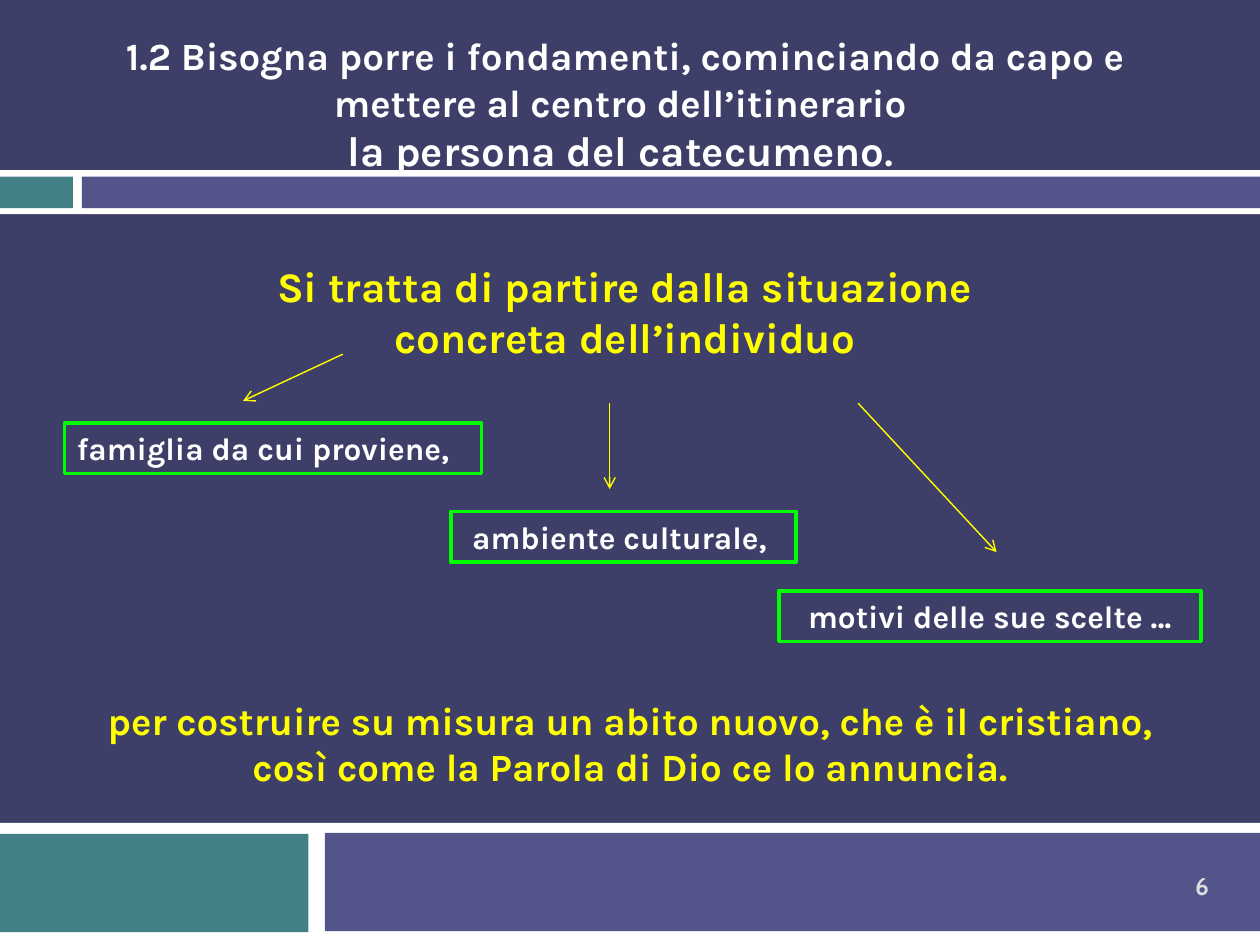
from lxml.etree import SubElement
from pptx import Presentation
from pptx.dml.color import RGBColor
from pptx.enum.shapes import MSO_CONNECTOR, MSO_SHAPE
from pptx.enum.text import MSO_ANCHOR, MSO_AUTO_SIZE, PP_ALIGN
from pptx.oxml.ns import qn
from pptx.util import Cm, Pt

COLORS = {
    "background": "3E3F68",
    "white": "FFFFFF",
    "teal": "438086",
    "violet": "53548A",
    "yellow": "FFFF00",
    "green": "00FF00",
    "number": "DEDEDE",
}
SLIDE_W, SLIDE_H = 25.4, 19.05
BOX_H = 1.02

BARS = [
    (0, 3.43, SLIDE_W, 0.89, "white"),
    (0, 3.56, 1.47, 0.64, "teal"),
    (1.65, 3.56, 23.75, 0.64, "violet"),
    (0, 16.59, SLIDE_W, 2.46, "white"),
    (0, 16.81, 6.22, 1.98, "teal"),
    (6.55, 16.79, 18.85, 1.98, "violet"),
]
BOXES = [
    (1.3, 8.53, 8.41, "famiglia da cui proviene,", PP_ALIGN.LEFT),
    (9.09, 10.31, 6.96, "ambiente culturale, ", PP_ALIGN.CENTER),
    (15.7, 11.91, 8.51, "motivi delle sue scelte …", PP_ALIGN.CENTER),
]
ARROWS = [
    (6.91, 7.14, 4.9, 8.08),
    (12.29, 8.13, 12.29, 9.86),
    (17.3, 8.13, 20.09, 11.13),
]


def rgb(name):
    return RGBColor.from_string(COLORS[name])


def add_rect(slide, x, y, w, h):
    sp = slide.shapes.add_shape(MSO_SHAPE.RECTANGLE, Cm(x), Cm(y), Cm(w), Cm(h))
    sp.shadow.inherit = False
    return sp


def add_bar(slide, x, y, w, h, color):
    sp = add_rect(slide, x, y, w, h)
    sp.fill.solid()
    sp.fill.fore_color.rgb = rgb(color)
    sp.line.fill.background()


def write(sp, paragraphs, color, font="Karla", align=PP_ALIGN.CENTER):
    """Fill a shape with paragraphs, each a list of (text, size) runs."""
    tf = sp.text_frame
    tf.word_wrap = True
    tf.auto_size = MSO_AUTO_SIZE.SHAPE_TO_FIT_TEXT
    tf.vertical_anchor = MSO_ANCHOR.TOP
    for i, runs in enumerate(paragraphs):
        p = tf.add_paragraph() if i else tf.paragraphs[0]
        p.alignment = align
        for text, size in runs:
            r = p.add_run()
            r.text = text
            r.font.name = font
            r.font.size = Pt(size)
            r.font.bold = True
            r.font.color.rgb = rgb(color)


def add_text(slide, x, y, w, h, paragraphs, color):
    sp = slide.shapes.add_textbox(Cm(x), Cm(y), Cm(w), Cm(h))
    write(sp, paragraphs, color)


def add_box(slide, x, y, w, text, align):
    sp = add_rect(slide, x, y, w, BOX_H)
    sp.fill.background()
    sp.line.color.rgb = rgb("green")
    sp.line.width = Pt(2)
    write(sp, [[(text, 18)]], "white", align=align)


def add_arrow(slide, x1, y1, x2, y2):
    line = slide.shapes.add_connector(
        MSO_CONNECTOR.STRAIGHT, Cm(x1), Cm(y1), Cm(x2), Cm(y2))
    line.line.color.rgb = rgb("yellow")
    line.line.width = Pt(0.79)
    SubElement(line.line._get_or_add_ln(), qn("a:tailEnd"), type="arrow")
    SubElement(line._element.spPr, qn("a:effectLst"))


def add_page_number(slide, number):
    sp = slide.shapes.add_textbox(Cm(23.06), Cm(17.32), Cm(2.34), Cm(1.07))
    write(sp, [[(number, 14)]], "number", font="Cabin")
    sp.text_frame.auto_size = MSO_AUTO_SIZE.NONE
    sp.text_frame.vertical_anchor = MSO_ANCHOR.MIDDLE


def main():
    prs = Presentation()
    prs.slide_width, prs.slide_height = Cm(SLIDE_W), Cm(SLIDE_H)
    slide = prs.slides.add_slide(prs.slide_layouts[6])
    slide.background.fill.solid()
    slide.background.fill.fore_color.rgb = rgb("background")

    for bar in BARS:
        add_bar(slide, *bar)
    add_page_number(slide, "6")

    add_text(slide, 0, 5.13, SLIDE_W, 2.31, [
        [("Si tratta di partire dalla situazione ", 24)],
        [("concreta dell’individuo ", 24)],
    ], "yellow")
    for box in BOXES:
        add_box(slide, *box)
    add_text(slide, 0, 13.92, SLIDE_W, 2.13, [
        [("per costruire su misura un abito nuovo, che è il cristiano,", 22)],
        [(" così come la Parola di Dio ce lo annuncia. ", 22)],
    ], "yellow")
    add_text(slide, 1.5, 0.53, 22.2, 3.18, [
        [("1.2 Bisogna porre i fondamenti, cominciando da capo e "
          "mettere al centro dell’itinerario ", 22)],
        [("la persona del catecumeno", 24), (". ", 22)],
    ], "white")
    for arrow in ARROWS:
        add_arrow(slide, *arrow)

    prs.save("out.pptx")


if __name__ == "__main__":
    main()
